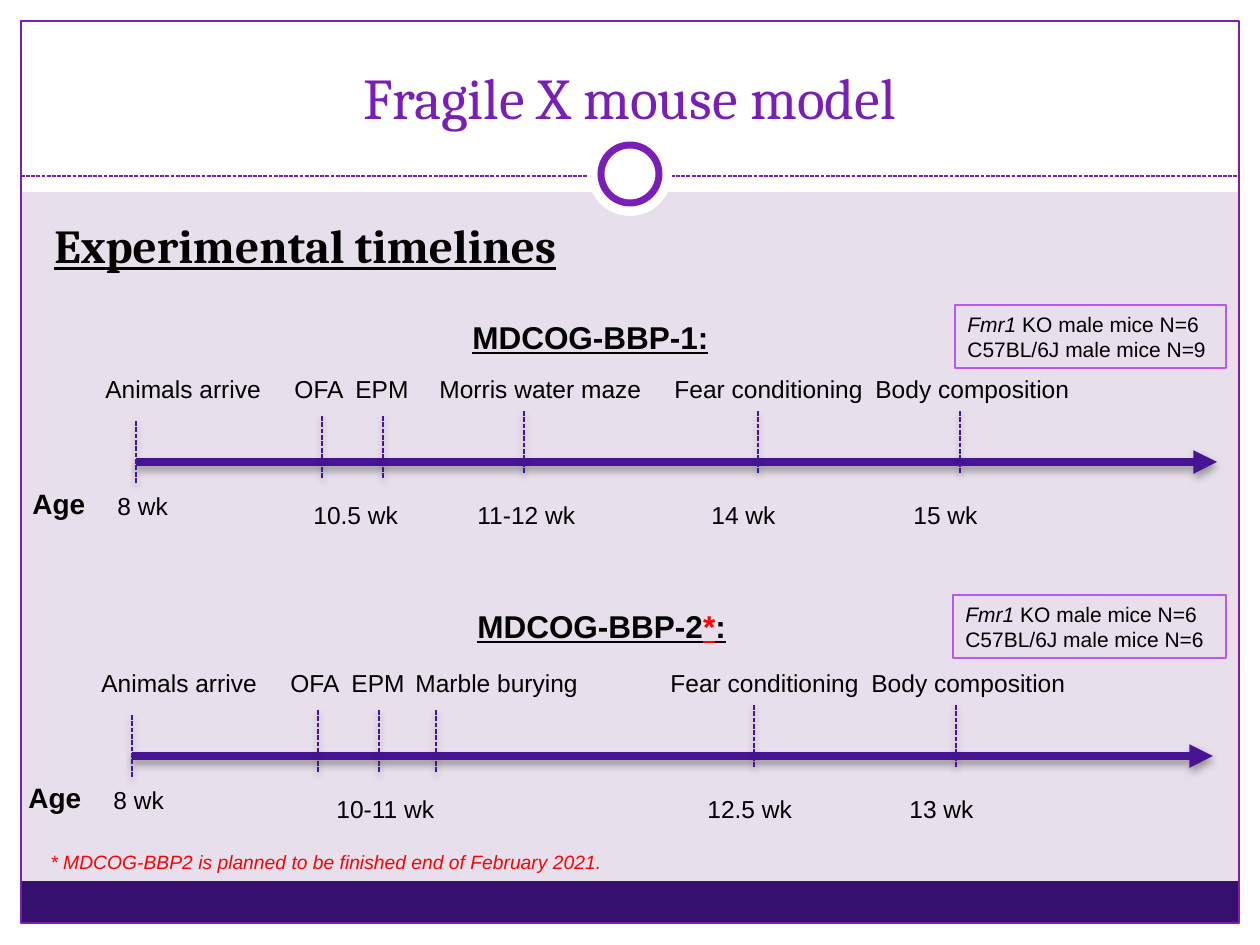
"""Build a slide with two experimental timelines for a mouse model study."""
from lxml import etree
from pptx import Presentation
from pptx.dml.color import RGBColor
from pptx.enum.dml import MSO_LINE
from pptx.enum.shapes import MSO_CONNECTOR, MSO_SHAPE
from pptx.enum.text import MSO_ANCHOR, MSO_AUTO_SIZE, PP_ALIGN
from pptx.oxml import parse_xml
from pptx.oxml.ns import nsdecls, qn
from pptx.util import Emu, Pt

RECT, OVAL = MSO_SHAPE.RECTANGLE, MSO_SHAPE.OVAL
STRAIGHT, DASH = MSO_CONNECTOR.STRAIGHT, MSO_LINE.SQUARE_DOT
CENTER, TOP, BOTTOM = PP_ALIGN.CENTER, MSO_ANCHOR.TOP, MSO_ANCHOR.BOTTOM
GROW = MSO_AUTO_SIZE.SHAPE_TO_FIT_TEXT

WHITE = RGBColor(0xFF, 0xFF, 0xFF)
BLACK = RGBColor(0, 0, 0)
RED = RGBColor(0xFF, 0, 0)
LILAC = RGBColor(0xE7, 0xDF, 0xEB)
PURPLE = RGBColor(0x79, 0x1F, 0xB8)
INDIGO = RGBColor(0x47, 0x15, 0x93)
DARK = RGBColor(0x35, 0x10, 0x6E)
VIOLET = RGBColor(0xB6, 0x57, 0xF6)

PX = 914400 / 126
SHADOW = (
    f'<a:effectLst {nsdecls("a")}><a:outerShdw blurRad="50800" dist="25400" '
    'dir="5400000" rotWithShape="0"><a:srgbClr val="000000">'
    '<a:alpha val="35000"/></a:srgbClr></a:outerShdw></a:effectLst>'
)


def px(*values):
    return [Emu(round(v * PX)) for v in values]


def add_text(box, paragraphs, size, font="Arial", bold=False, underline=False):
    tf = box.text_frame
    tf.word_wrap = True
    for i, runs in enumerate(paragraphs):
        p = tf.add_paragraph() if i else tf.paragraphs[0]
        for text, color, italic in runs:
            r = p.add_run()
            r.text = text
            r.font.name, r.font.size = font, Pt(size)
            r.font.bold, r.font.italic = bold, italic
            r.font.underline = underline
            r.font.color.rgb = color
    return tf


prs = Presentation()
prs.slide_width, prs.slide_height = px(1260, 945)
slide = prs.slides.add_slide(prs.slide_layouts[5])
shapes = slide.shapes
slide.background.fill.solid()
slide.background.fill.fore_color.rgb = LILAC

lines = [
    (21, 176, 1239, 176, PURPLE, 0.75, True, False),
]
panels = [
    (RECT, 0, 924, 1260, 21, WHITE, None, 0),
    (RECT, 0, 0, 1260, 192, WHITE, None, 0),
    (RECT, 0, 0, 21, 945, WHITE, None, 0),
    (RECT, 1239, 0, 21, 945, WHITE, None, 0),
    (RECT, 21, 881, 1217, 43, DARK, None, 0),
    (RECT, 21, 21, 1218, 902, None, PURPLE, 0.75),
    (OVAL, 588, 132, 84, 84, WHITE, None, 0),
    (OVAL, 601, 145, 58, 58, WHITE, PURPLE, 4),
]
texts = [
    (38, 844, 1113, 37, 11, False, False,
     [("* MDCOG-BBP2 is planned to be finished end of February 2021.", RED, True)]),
]

shared_ticks = [(136, 421), (322, 416), (383, 416), (758, 411), (960, 411)]
shared_labels = [
    ("Animals arrive", 93, 368, 189), ("OFA", 282, 368, 106),
    ("EPM", 343, 368, 106), ("Fear conditioning", 662, 368, 233),
    ("Body composition", 863, 368, 233), ("8 wk", 105, 485, 106),
]
studies = [
    (0, 0, (524, 411),
     [("Morris water maze", 427, 368, 233), ("10.5 wk", 301, 494, 118),
      ("11-12 wk", 465, 494, 147), ("14 wk", 699, 494, 147),
      ("15 wk", 901, 494, 147)],
     (460, 312), [("MDCOG-BBP-1:", BLACK, False)], (955, 305, 271), 9),
    (-4, 294, (440, 416),
     [("Marble burying", 407, 368, 192), ("10-11 wk", 328, 494, 134),
      ("12.5 wk", 699, 494, 147), ("13 wk", 901, 494, 147)],
     (465, 601),
     [("MDCOG-BBP-2", BLACK, False), ("*", RED, False), (":", BLACK, False)],
     (953, 595, 273), 6),
]
for dx, dy, extra_tick, extra_labels, heading, heading_runs, _, _ in studies:
    lines.append((136 + dx, 462 + dy, 1217 + dx, 462 + dy, INDIGO, 4.5, False, True))
    for x, y in shared_ticks + [extra_tick]:
        lines.append((x + dx, y + dy, x + dx, y + dy + 63, INDIGO, 0.9, True, True))
    for text, x, y, w in shared_labels + extra_labels:
        texts.append((x + dx, y + dy, w, 43, 14, False, False, [(text, BLACK, False)]))
    texts.append((20 + dx, 480 + dy, 105, 47, 16, True, False, [("Age", BLACK, False)]))
    texts.append((*heading, 355, 50, 18, True, True, heading_runs))

ring = panels[6:]
for kind, x, y, w, h, fill, line, width in panels[:6]:
    sp = shapes.add_shape(kind, *px(x, y, w, h))
    sp.shadow.inherit = False
    if fill is None:
        sp.fill.background()
    else:
        sp.fill.solid()
        sp.fill.fore_color.rgb = fill
    if line is None:
        sp.line.fill.background()
    else:
        sp.line.color.rgb = line
        sp.line.width = Pt(width)

for x1, y1, x2, y2, color, width, dashed, shadowed in lines:
    cx = shapes.add_connector(STRAIGHT, *px(x1, y1, x2, y2))
    cx.line.color.rgb = color
    cx.line.width = Pt(width)
    if dashed:
        cx.line.dash_style = DASH
    elif shadowed:
        etree.SubElement(cx.line._get_or_add_ln(), qn("a:tailEnd"), type="triangle")
    if shadowed:
        cx._element.spPr.append(parse_xml(SHADOW))
    else:
        etree.SubElement(cx._element.spPr, qn("a:effectLst"))

for kind, x, y, w, h, fill, line, width in ring:
    sp = shapes.add_shape(kind, *px(x, y, w, h))
    sp.shadow.inherit = False
    sp.fill.solid()
    sp.fill.fore_color.rgb = fill
    if line is None:
        sp.line.fill.background()
    else:
        sp.line.color.rgb = line
        sp.line.width = Pt(width)

title = shapes.title
title.left, title.top, title.width, title.height = px(42, 32, 1176, 105)
tf = add_text(title, [[("Fragile X mouse model", PURPLE, False)]], 33, "Cambria")
tf.vertical_anchor = BOTTOM
tf.paragraphs[0].alignment = CENTER
shapes._spTree.append(title._element)

body = shapes.add_textbox(*px(42, 210, 1172, 630))
tf = add_text(body, [[("Experimental timelines", BLACK, False)]], 27, "Cambria", True, True)
tf.vertical_anchor = TOP
tf.paragraphs[0].space_before = Pt(5.4)

for x, y, w, h, size, bold, underline, runs in texts:
    box = shapes.add_textbox(*px(x, y, w, h))
    tf = add_text(box, [runs], size, bold=bold, underline=underline)
    tf.auto_size = GROW

for *_, (x, y, w), controls in studies:
    sp = shapes.add_shape(RECT, *px(x, y, w, 63))
    sp.shadow.inherit = False
    sp.fill.background()
    sp.line.color.rgb = VIOLET
    sp.line.width = Pt(0.75)
    tf = add_text(sp, [
        [("Fmr1", BLACK, True), (" KO male mice N=6", BLACK, False)],
        [(f"C57BL/6J male mice N={controls}", BLACK, False)],
    ], 12)
    tf.vertical_anchor = TOP
    tf.auto_size = GROW
    for p in tf.paragraphs:
        p.alignment = PP_ALIGN.LEFT

prs.save("out.pptx")
